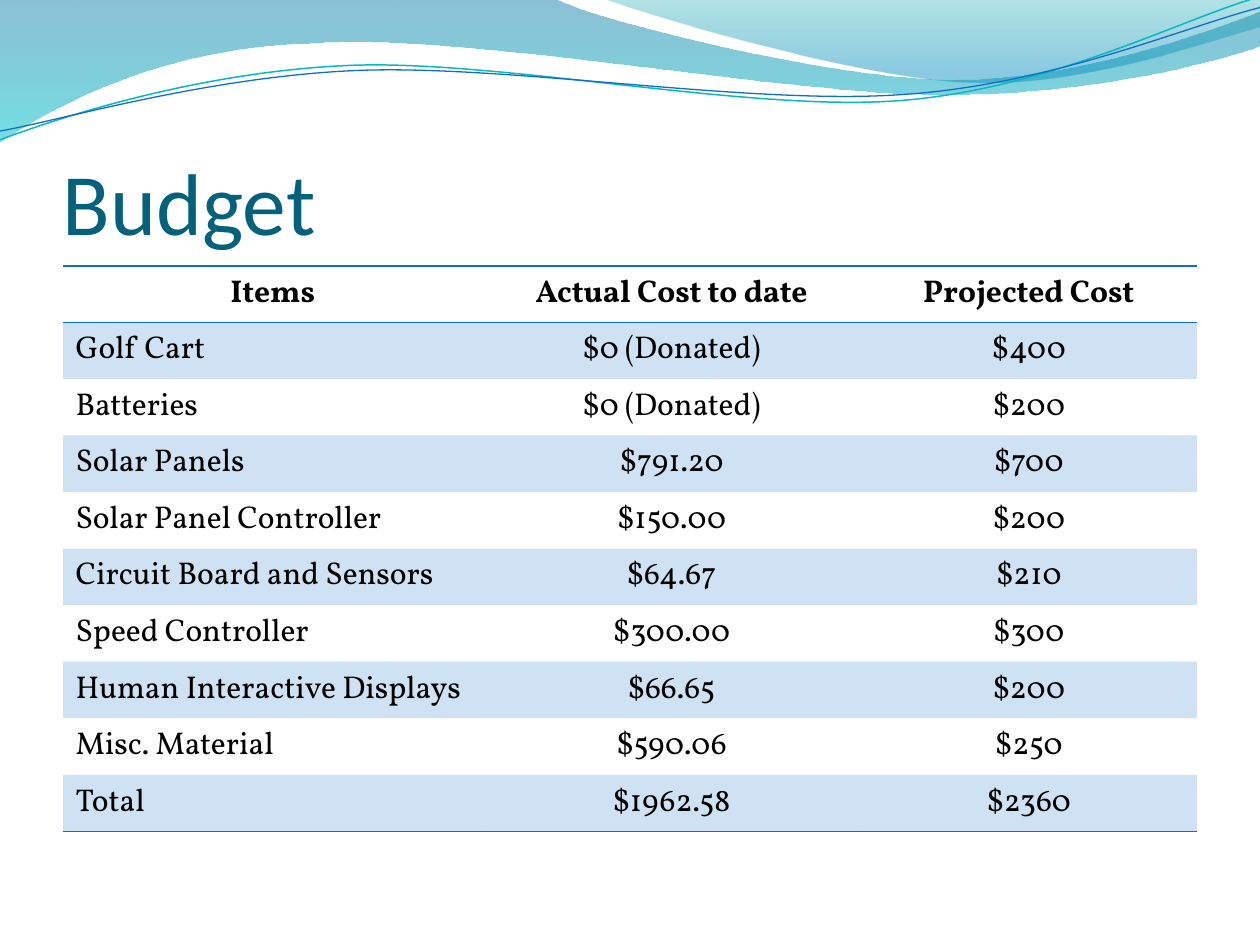
import pptx
import pptx.dml.color
import pptx.enum.text
import pptx.oxml
import pptx.oxml.ns
import pptx.util
from pptx.util import Inches

BLUE = "0F6FC6"
BLACK = "000000"
NO_STYLE = "{2D5ABB26-0587-4C30-8999-92F81FD0307C}"

# An entry of two numbers is a straight line's end; six numbers are a Bezier curve.
LEFT_WAVE = [(0, 0), (4.4, -0.01), (4.76, 0.17, 6.64, 0.63, 7.58, 0.63),
             (8.53, 0.63, 9.58, 0.26, 10, 0.09), (10.01, 0.36),
             (9.83, 0.44, 8.7, 0.76, 7.46, 0.75),
             (6.22, 0.75, 3.82, 0.28, 2.57, 0.34),
             (1.29, 0.36, 0.46, 0.83, -0.01, 1.13), (0, 0)]
RIGHT_WAVE = [(4.79, -0.01), (5.09, 0.11, 6.82, 0.62, 7.69, 0.65),
              (8.56, 0.69, 9.61, 0.32, 10, 0.21), (10, 0), (4.79, -0.01)]
TEAL_STRAND = [(0, 1.11), (0.48, 0.93, 1.58, 0.57, 2.77, 0.52),
               (3.95, 0.47, 5.93, 0.89, 7.13, 0.8),
               (8.33, 0.71, 9.38, 0.15, 9.98, -0.02)]
BLUE_STRAND = [(0, 1.04), (0.47, 0.96, 1.64, 0.61, 2.83, 0.56),
               (4.03, 0.51, 5.97, 0.84, 7.17, 0.75),
               (8.36, 0.67, 9.41, 0.21, 10, 0.06)]

COLUMN_WIDTHS = [3.33, 3, 2.67]
TABLE_HEIGHT = 4.49
BUDGET = [
    ("Items", "Actual Cost to date", "Projected Cost"),
    ("Golf Cart", "$0 (Donated)", "$400"),
    ("Batteries", "$0 (Donated)", "$200"),
    ("Solar Panels", "$791.20", "$700"),
    ("Solar Panel Controller", "$150.00", "$200"),
    ("Circuit Board and Sensors", "$64.67", "$210"),
    ("Speed Controller", "$300.00", "$300"),
    ("Human Interactive Displays", "$66.65", "$200"),
    ("Misc. Material", "$590.06", "$250"),
    ("Total", "$1962.58", "$2360"),
]


def rgb(value):
    return pptx.dml.color.RGBColor.from_string(value)


def set_alpha(element, percents):
    """Give the colours inside element their opacities, in order."""
    colours = element.iter(pptx.oxml.ns.qn("a:srgbClr"))
    for colour, percent in zip(list(colours), percents):
        alpha = colour.makeelement(pptx.oxml.ns.qn("a:alpha"),
                                   {"val": str(percent * 1000)})
        colour.append(alpha)


def bend_segments(shape, outline):
    """Fold each three straight segments that stand for a curve into one Bezier."""
    segments = iter(list(shape._element.iter(pptx.oxml.ns.qn("a:lnTo"))))
    for part in outline[1:]:
        first = next(segments)
        if len(part) == 2:
            continue
        curve = first.makeelement(pptx.oxml.ns.qn("a:cubicBezTo"), {})
        first.addprevious(curve)
        for segment in (first, next(segments), next(segments)):
            curve.append(segment[0])
            segment.getparent().remove(segment)


def add_outline(page, outline, closed):
    points = [(Inches(part[i]), Inches(part[i + 1]))
              for part in outline for i in range(0, len(part), 2)]
    builder = page.shapes.build_freeform(*points[0])
    builder.add_line_segments(points[1:], close=closed)
    shape = builder.convert_to_shape()
    bend_segments(shape, outline)
    shape.shadow.inherit = False
    return shape


def add_wave(page, outline, stops):
    """Add a filled wave; stops are (position, colour, opacity), top to bottom."""
    wave = add_outline(page, outline, True)
    wave.line.fill.background()
    wave.fill.gradient()
    wave.fill.gradient_angle = 270
    for stop, (position, colour, _) in zip(wave.fill.gradient_stops, stops):
        stop.position = position
        stop.color.rgb = rgb(colour)
    set_alpha(wave._element.spPr, [opacity for _, _, opacity in stops])


def add_strand(page, outline, colour, width):
    strand = add_outline(page, outline, False)
    strand.fill.background()
    strand.line.color.rgb = rgb(colour)
    strand.line.width = pptx.util.Pt(width)


def style_text(para, font, size, colour, bold=False):
    for span in para.runs:
        span.font.name = font
        span.font.size = pptx.util.Pt(size)
        span.font.bold = bold
        span.font.color.rgb = rgb(colour)


def add_title(page, text):
    box = page.shapes.add_textbox(Inches(0.5), Inches(0.76), Inches(9), Inches(1.25))
    frame = box.text_frame
    frame.word_wrap = True
    frame.vertical_anchor = pptx.enum.text.MSO_ANCHOR.BOTTOM
    frame.margin_left = frame.margin_right = frame.margin_bottom = 0
    frame.text = text
    style_text(frame.paragraphs[0], "Calibri", 50, "04617B")


def add_borders(cell, edges):
    """Draw blue rules on the given edges, T before B."""
    properties = cell._tc.get_or_add_tcPr()
    for index, edge in enumerate(edges):
        properties.insert(index, pptx.oxml.parse_xml(
            f'<a:ln{edge} {pptx.oxml.ns.nsdecls("a")} w="12700"><a:solidFill>'
            f'<a:srgbClr val="{BLUE}"/></a:solidFill></a:ln{edge}>'))


def fill_cell(cell, banded):
    if banded:
        cell.fill.solid()
        cell.fill.fore_color.rgb = rgb(BLUE)
        set_alpha(cell._tc.tcPr, [20])
    else:
        cell.fill.background()


def add_budget_table(page):
    frame = page.shapes.add_table(
        len(BUDGET), len(COLUMN_WIDTHS), Inches(0.5), Inches(2.11),
        Inches(sum(COLUMN_WIDTHS)), Inches(TABLE_HEIGHT))
    table = frame.table
    table.first_row = table.horz_banding = False
    table._tbl.tblPr.find(pptx.oxml.ns.qn("a:tableStyleId")).text = NO_STYLE
    for column, width in zip(table.columns, COLUMN_WIDTHS):
        column.width = Inches(width)
    borders = {0: "TB", len(BUDGET) - 1: "B"}
    for r, values in enumerate(BUDGET):
        for c, value in enumerate(values):
            cell = table.cell(r, c)
            cell.text_frame.text = value
            para = cell.text_frame.paragraphs[0]
            if r == 0 or c > 0:
                para.alignment = pptx.enum.text.PP_ALIGN.CENTER
            style_text(para, "Vollkorn", 18, BLACK, bold=r == 0)
            fill_cell(cell, r % 2 == 1)
            add_borders(cell, borders.get(r, ""))


def main():
    deck = pptx.Presentation()
    deck.slide_width, deck.slide_height = Inches(10), Inches(7.5)
    page = deck.slides.add_slide(deck.slide_layouts[6])
    add_wave(page, LEFT_WAVE, [(0, "0074A1", 45), (1, "00C6CF", 55)])
    add_wave(page, RIGHT_WAVE, [(0, "00A1A9", 30), (0.8, "008BBF", 45)])
    add_strand(page, TEAL_STRAND, "0AB8BF", 0.85)
    add_strand(page, BLUE_STRAND, BLUE, 0.75)
    add_title(page, "Budget")
    add_budget_table(page)
    deck.save("out.pptx")


if __name__ == "__main__":
    main()
